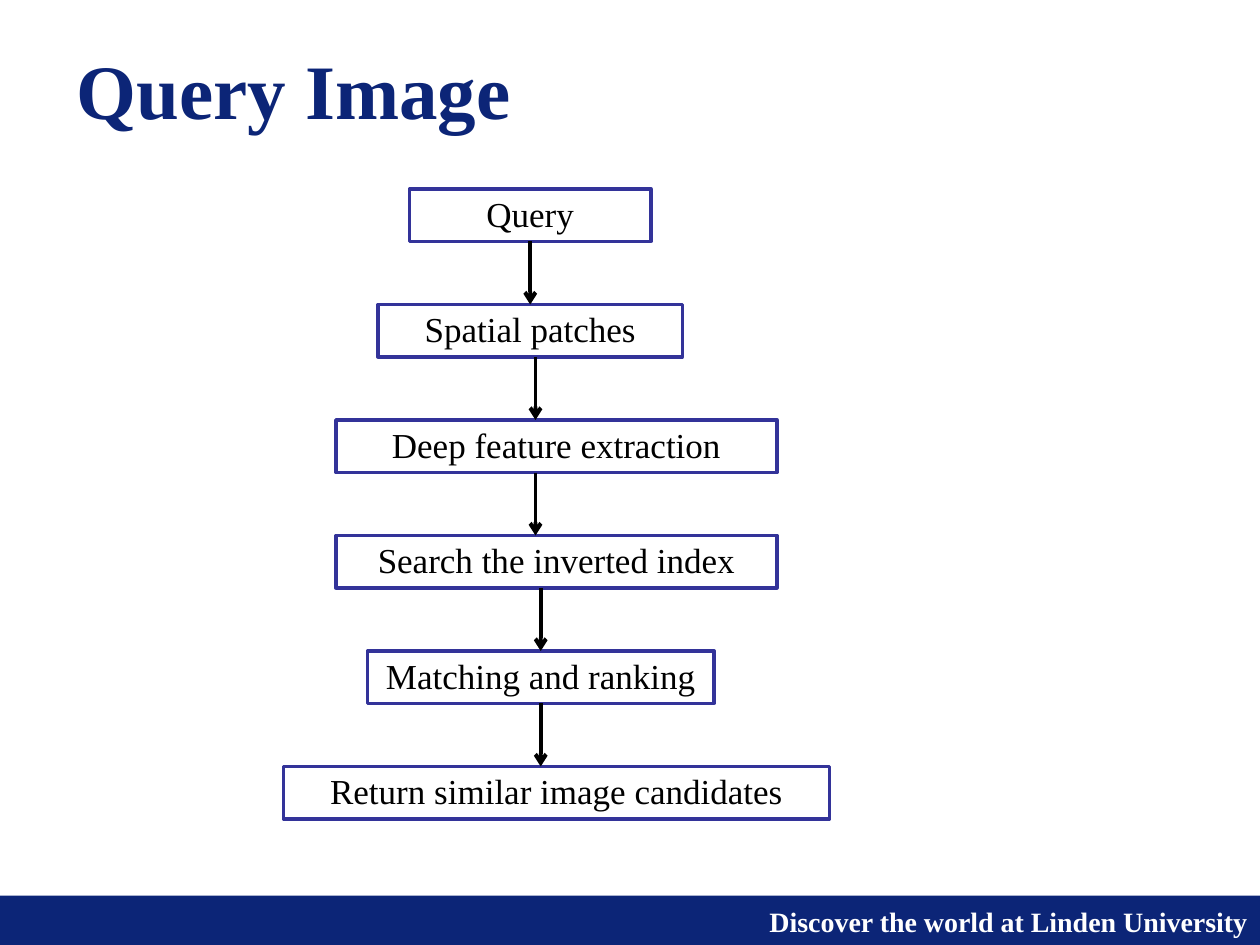
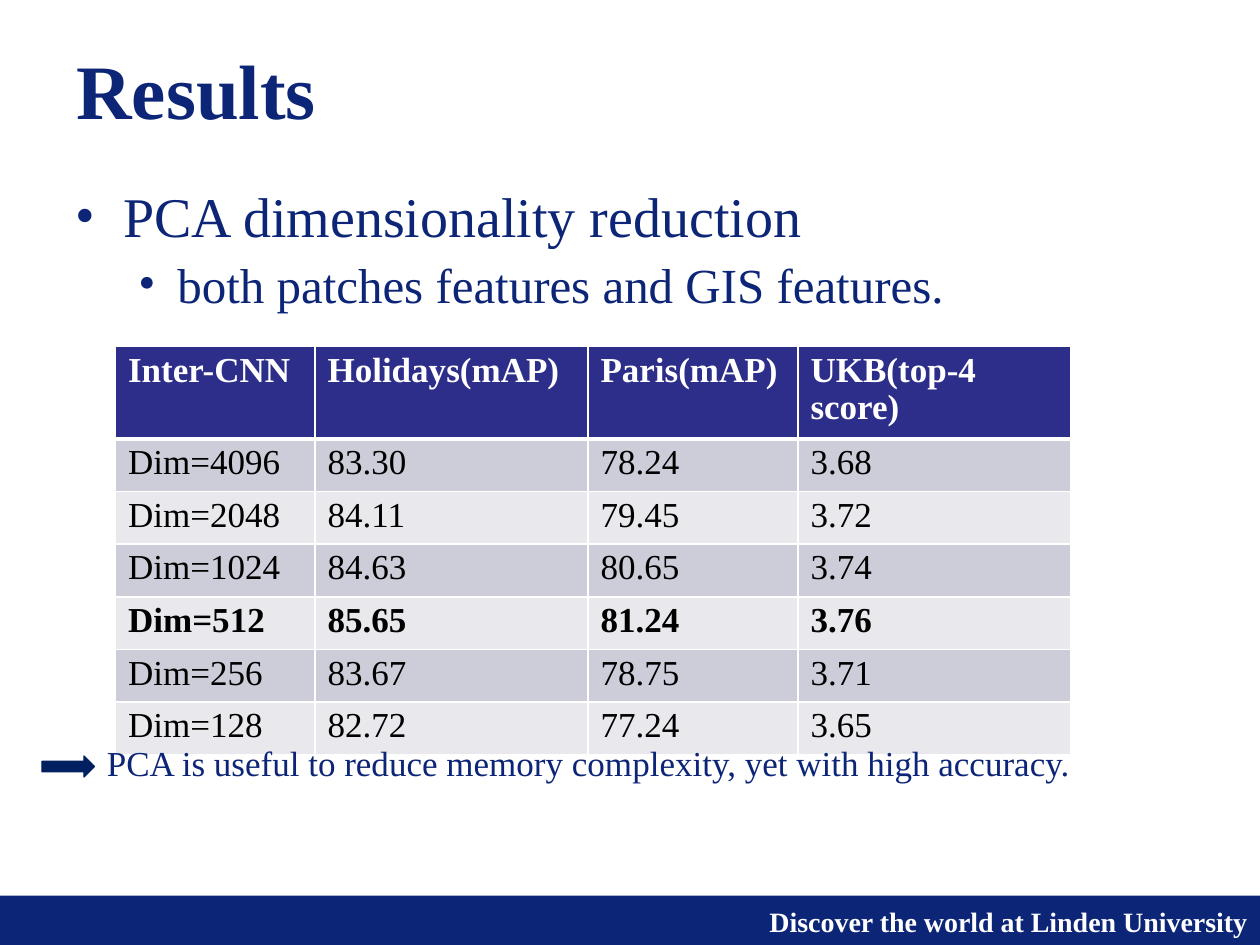
from lxml import etree
from pptx import Presentation
from pptx.dml.color import RGBColor
from pptx.enum.shapes import MSO_CONNECTOR, MSO_SHAPE
from pptx.enum.text import MSO_ANCHOR, PP_ALIGN
from pptx.oxml.ns import qn
from pptx.util import Inches, Pt

RECTANGLE, RIGHT_ARROW = MSO_SHAPE.RECTANGLE, MSO_SHAPE.RIGHT_ARROW
STRAIGHT = MSO_CONNECTOR.STRAIGHT
TOP, MIDDLE = MSO_ANCHOR.TOP, MSO_ANCHOR.MIDDLE
LEFT, CENTER, RIGHT = PP_ALIGN.LEFT, PP_ALIGN.CENTER, PP_ALIGN.RIGHT

WIDTH, HEIGHT = 10, 7.5
GRID = 12  # grid units per inch, across and down
FONT = "Times New Roman"
FOOTER = "Discover the world at Linden University"
COLORS = {
    "navy": "0C2577", "box_line": "333399", "arrow": "002060",
    "white": "FFFFFF", "black": "000000",
    "header": "2D2D8A", "band_dark": "CDCDDA", "band_light": "E8E8ED",
}

# Flow steps as label, left column and width in columns
STEPS = [
    ("Query", 39, 23),
    ("Spatial patches", 36, 29),
    ("Deep feature extraction", 32, 42),
    ("Search the inverted index", 32, 42),
    ("Matching and ranking", 35, 33),
    ("Return similar image candidates", 27, 52),
]
ARROW_COLUMNS = [50.5, 51, 51, 51.5, 51.5]
FIRST_STEP_ROW, STEP_PITCH, STEP_HEIGHT = 18, 11, 5

RESULTS = [
    ("Inter-CNN", "Holidays(mAP)", "Paris(mAP)", "UKB(top-4 score)"),
    ("Dim=4096", "83.30", "78.24", "3.68"),
    ("Dim=2048", "84.11", "79.45", "3.72"),
    ("Dim=1024", "84.63", "80.65", "3.74"),
    ("Dim=512", "85.65", "81.24", "3.76"),
    ("Dim=256", "83.67", "78.75", "3.71"),
    ("Dim=128", "82.72", "77.24", "3.65"),
]
BEST_ROW = 4


def units(value):
    return Inches(value / GRID)


def rgb(name):
    return RGBColor.from_string(COLORS[name])


class Deck:
    """Holds the shared style and the slide being filled; places are grid units."""

    def __init__(self):
        self.presentation = Presentation()
        self.presentation.slide_width = Inches(WIDTH)
        self.presentation.slide_height = Inches(HEIGHT)
        self.slide = None

    def add_slide(self, title):
        self.slide = self.presentation.slides.add_slide(self.presentation.slide_layouts[6])
        self.shape(RECTANGLE, (0, 85.3, 120, 4.7), "navy")
        self.text((39.7, 85.6, 80.3, 4.4), FOOTER, size=16, color="white", bold=True,
                  alignment=RIGHT, space_before=Pt(1.5))
        self.text((6.1, 4.3, 106.8, 8.3), title, anchor=MIDDLE, size=44, bold=True)

    def fill_paragraph(self, paragraph, text, size=20, color="navy", bold=False,
                       **paragraph_format):
        for name, value in paragraph_format.items():
            setattr(paragraph, name, value)
        run = paragraph.add_run()
        run.text = text
        for name, value in {"name": FONT, "size": Pt(size), "bold": bold}.items():
            setattr(run.font, name, value)
        run.font.color.rgb = rgb(color)

    def text(self, place, text, anchor=TOP, **style):
        frame = self.slide.shapes.add_textbox(*map(units, place)).text_frame
        frame.word_wrap = True
        frame.vertical_anchor = anchor
        self.fill_paragraph(frame.paragraphs[0], text, **style)

    def bullets(self, place, items):
        """Items are text, level, size, text indent and hanging width in inches."""
        frame = self.slide.shapes.add_textbox(*map(units, place)).text_frame
        frame.word_wrap = True
        for index, (text, level, size, indent, hanging) in enumerate(items):
            paragraph = frame.add_paragraph() if index else frame.paragraphs[0]
            self.fill_paragraph(paragraph, text, size=size, level=level, space_before=Pt(3))
            properties = paragraph._p.get_or_add_pPr()
            properties.set("marL", str(Inches(indent)))
            properties.set("indent", str(-Inches(hanging)))
            etree.SubElement(properties, qn("a:buFont"), typeface=FONT)
            etree.SubElement(properties, qn("a:buChar"), char="•")

    def shape(self, kind, place, fill, line=None, line_width=1):
        shape = self.slide.shapes.add_shape(kind, *map(units, place))
        shape.shadow.inherit = False
        shape.fill.solid()
        shape.fill.fore_color.rgb = rgb(fill)
        if line:
            shape.line.color.rgb = rgb(line)
            shape.line.width = Pt(line_width)
        else:
            shape.line.fill.background()
        return shape

    def box(self, place, label):
        frame = self.shape(RECTANGLE, place, "white", "box_line", 2).text_frame
        frame.word_wrap = True
        frame.vertical_anchor = TOP
        self.fill_paragraph(frame.paragraphs[0], label, color="black",
                            alignment=CENTER, line_spacing=0.95)

    def down_arrow(self, column, top, bottom):
        connector = self.slide.shapes.add_connector(
            STRAIGHT, *map(units, (column, top, column, bottom)))
        connector.line.color.rgb = rgb("black")
        connector.line.width = Pt(2.25)
        line = connector._element.spPr.find(qn("a:ln"))
        etree.SubElement(line, qn("a:tailEnd"), type="arrow")
        etree.SubElement(connector._element.spPr, qn("a:effectLst"))

    def borders(self, cell, top, bottom):
        properties = cell._tc.get_or_add_tcPr()
        for side, width in {"L": 1, "R": 1, "T": top, "B": bottom}.items():
            line = etree.SubElement(properties, qn(f"a:ln{side}"), w=str(Pt(width)))
            fill = etree.SubElement(line, qn("a:solidFill"))
            etree.SubElement(fill, qn("a:srgbClr"), val=COLORS["white"])

    def table(self, left, top, column_widths, row_height, rows, bold_rows):
        place = (left, top, sum(column_widths), row_height * len(rows))
        table = self.slide.shapes.add_table(
            len(rows), len(column_widths), *map(units, place)).table
        table.first_row = table.horz_banding = False
        for column, width in zip(table.columns, column_widths):
            column.width = units(width)
        for row_index, values in enumerate(rows):
            is_header = row_index == 0
            band = "band_dark" if row_index % 2 else "band_light"
            for column_index, value in enumerate(values):
                cell = table.cell(row_index, column_index)
                self.borders(cell, top=3 if row_index == 1 else 1,
                             bottom=3 if is_header else 1)
                cell.fill.solid()
                cell.fill.fore_color.rgb = rgb("header" if is_header else band)
                self.fill_paragraph(cell.text_frame.paragraphs[0], value,
                                    color="white" if is_header else "black",
                                    bold=row_index in bold_rows,
                                    alignment=LEFT, line_spacing=0.95)


def add_query_slide(deck):
    deck.add_slide("Query Image")
    tops = [FIRST_STEP_ROW + STEP_PITCH * index for index in range(len(STEPS))]
    for (label, left, width), top in zip(STEPS, tops):
        deck.box((left, top, width, STEP_HEIGHT), label)
    for column, top in zip(ARROW_COLUMNS, tops):
        deck.down_arrow(column, top + STEP_HEIGHT, top + STEP_PITCH)


def add_results_slide(deck):
    deck.add_slide("Results")
    deck.bullets((6, 16.7, 99, 13.3), [
        ("PCA dimensionality reduction", 0, 32, 0.38, 0.38),
        ("both patches features and GIS features.", 1, 28, 0.81, 0.31),
    ])
    deck.table(11, 33, (19, 26, 20, 26), 4.9, RESULTS, bold_rows=(0, BEST_ROW))
    deck.text((9, 70, 113, 8),
              "PCA is useful to reduce memory complexity, yet with high accuracy.")
    deck.shape(RIGHT_ARROW, (4, 72, 5, 2), "arrow", "arrow", 0.75)


def main():
    deck = Deck()
    add_query_slide(deck)
    add_results_slide(deck)
    deck.presentation.save("out.pptx")


if __name__ == "__main__":
    main()
